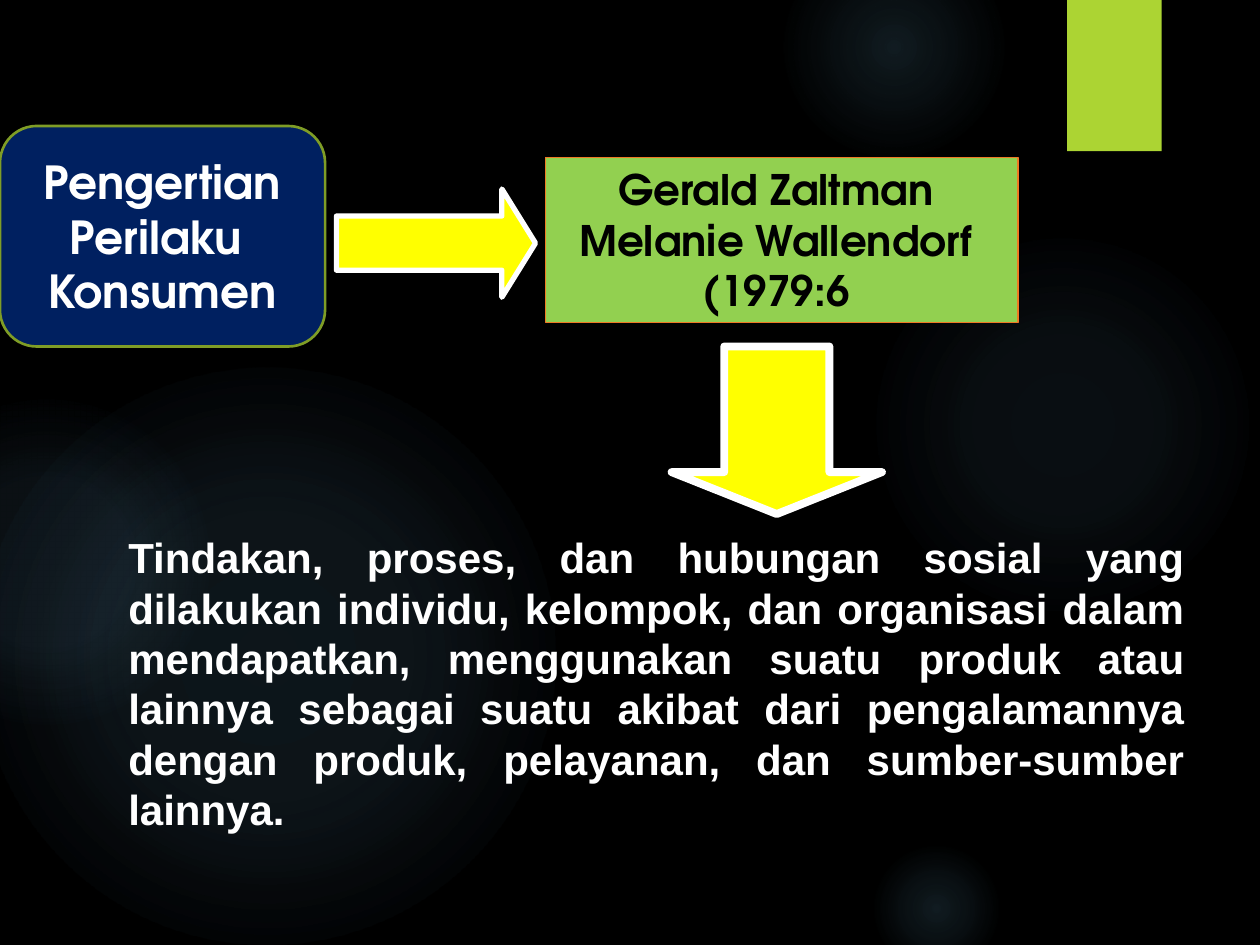
import pptx
import pptx.dml.color
import pptx.enum.shapes
import pptx.enum.text
import pptx.oxml
import pptx.oxml.ns
import pptx.util

Inches = pptx.util.Inches
Pt = pptx.util.Pt
SHAPE = pptx.enum.shapes.MSO_SHAPE
ALIGN = pptx.enum.text.PP_ALIGN
ANCHOR = pptx.enum.text.MSO_ANCHOR
AUTO_SIZE = pptx.enum.text.MSO_AUTO_SIZE

COLORS = {
    "background": "000000",
    "glow": "7AC4F0",
    "tab": "ACD433",
    "arrow": "FFFF00",
    "white": "FFFFFF",
    "black": "000000",
    "topic": "002060",
    "topic_edge": "7F9D26",
    "authors": "92D050",
    "authors_edge": "EF7A24",
}
HEADING = "TeX Gyre Adventor"
GLOWS = [
    (6.89, 1.83, 3.08, [(0, 7), (36, 6), (69, 0)]),
    (6.22, -0.5, 1.75, [(0, 14), (36, 7), (73, 0)]),
    (6.89, 6.67, 1.08, [(0, 14), (36, 7), (66, 0)]),
    (-0.17, 2.92, 4.58, [(0, 11), (36, 10), (75, 0)]),
    (-0.92, 3.17, 2.58, [(0, 8), (36, 8), (72, 0)]),
]
DEFINITION = (
    "Tindakan, proses, dan hubungan sosial yang dilakukan individu, kelompok, "
    "dan organisasi dalam mendapatkan, menggunakan suatu produk atau lainnya "
    "sebagai suatu akibat dari pengalamannya dengan produk, pelayanan, dan "
    "sumber-sumber lainnya."
)


def rgb(name):
    return pptx.dml.color.RGBColor.from_string(COLORS[name])


def apply(target, values):
    for name, value in values.items():
        setattr(target, name, value)


def add_block(slide, kind, box, fill=None, edge=None, edge_width=0):
    block = slide.shapes.add_shape(kind, *map(Inches, box))
    block.shadow.inherit = False
    if fill:
        block.fill.solid()
        block.fill.fore_color.rgb = rgb(fill)
    else:
        block.fill.background()
    if edge:
        block.line.color.rgb = rgb(edge)
        block.line.width = Pt(edge_width)
    else:
        block.line.fill.background()
    return block


def add_glow(slide, left, top, size, stops):
    glow = add_block(slide, SHAPE.OVAL, (left, top, size, size))
    stop_xml = "".join(
        f'<a:gs pos="{place * 1000}"><a:srgbClr val="{COLORS["glow"]}">'
        f'<a:alpha val="{opacity * 1000}"/></a:srgbClr></a:gs>'
        for place, opacity in stops
    )
    gradient = pptx.oxml.parse_xml(
        f'<a:gradFill {pptx.oxml.ns.nsdecls("a")} rotWithShape="1">'
        f'<a:gsLst>{stop_xml}</a:gsLst><a:path path="circle">'
        '<a:fillToRect l="50000" t="50000" r="50000" b="50000"/>'
        "</a:path></a:gradFill>"
    )
    properties = glow.element.spPr
    properties.replace(properties.find(pptx.oxml.ns.qn("a:noFill")), gradient)


def add_arrow(slide, box, head, edge_width, rotation=0):
    arrow = add_block(slide, SHAPE.RIGHT_ARROW, box, "arrow", "white", edge_width)
    arrow.adjustments[1] = head
    arrow.rotation = rotation


def write(block, lines, font, size, color, align, anchor, auto_size):
    frame = block.text_frame
    apply(frame, {"word_wrap": True, "vertical_anchor": anchor, "auto_size": auto_size})
    frame.text = "\n".join(lines)
    for paragraph in frame.paragraphs:
        paragraph.alignment = align
        apply(paragraph.font, {"name": font, "size": Pt(size), "bold": True})
        paragraph.font.color.rgb = rgb(color)


def main():
    deck = pptx.Presentation()
    apply(deck, {"slide_width": Inches(10), "slide_height": Inches(7.5)})
    slide = deck.slides.add_slide(deck.slide_layouts[6])
    slide.background.fill.solid()
    slide.background.fill.fore_color.rgb = rgb("background")

    for glow in GLOWS:
        add_glow(slide, *glow)
    add_block(slide, SHAPE.RECTANGLE, (8.47, 0, 0.75, 1.2), "tab")

    add_arrow(slide, (2.67, 1.5, 1.58, 0.86), 0.31, 3)
    add_arrow(slide, (5.5, 2.58, 1.33, 1.67), 0.25, 4.5, rotation=90)

    definition = slide.shapes.add_textbox(*map(Inches, (0.92, 4.17, 8.58, 2.52)))
    write(definition, [DEFINITION], "Arial", 24, "white",
          ALIGN.JUSTIFY, ANCHOR.TOP, AUTO_SIZE.SHAPE_TO_FIT_TEXT)

    authors = add_block(slide, SHAPE.RECTANGLE, (4.33, 1.25, 3.75, 1.31),
                        "authors", "authors_edge", 0.75)
    write(authors, ["Gerald Zaltman ", "Melanie Wallendorf ", "(1979:6 "], HEADING, 24,
          "black", ALIGN.CENTER, ANCHOR.TOP, AUTO_SIZE.SHAPE_TO_FIT_TEXT)

    topic = add_block(slide, SHAPE.ROUNDED_RECTANGLE, (0, 1, 2.58, 1.75),
                      "topic", "topic_edge", 1.5)
    write(topic, ["Pengertian", "Perilaku ", "Konsumen"], HEADING, 26,
          "white", ALIGN.CENTER, ANCHOR.MIDDLE, AUTO_SIZE.NONE)

    deck.save("out.pptx")


if __name__ == "__main__":
    main()
